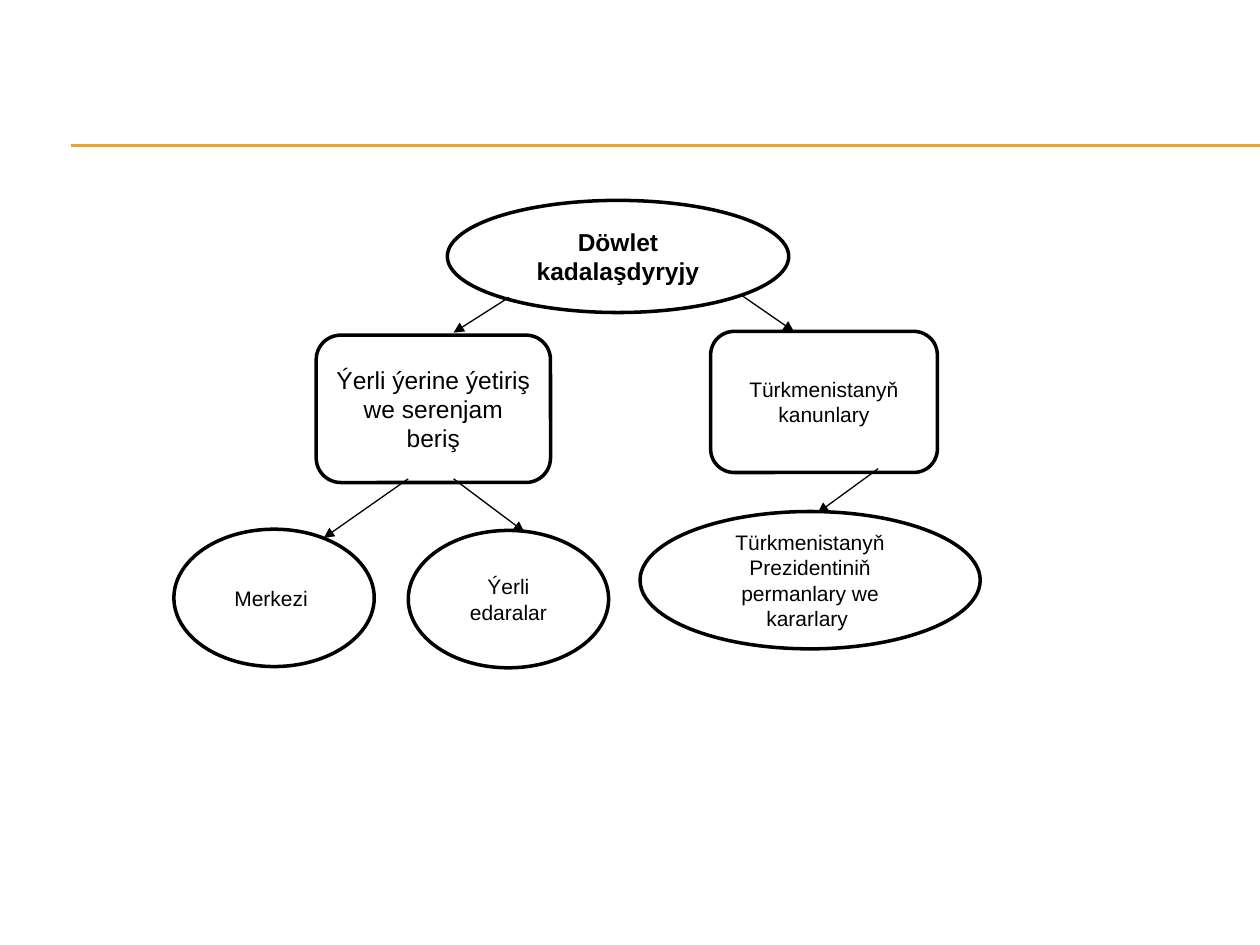
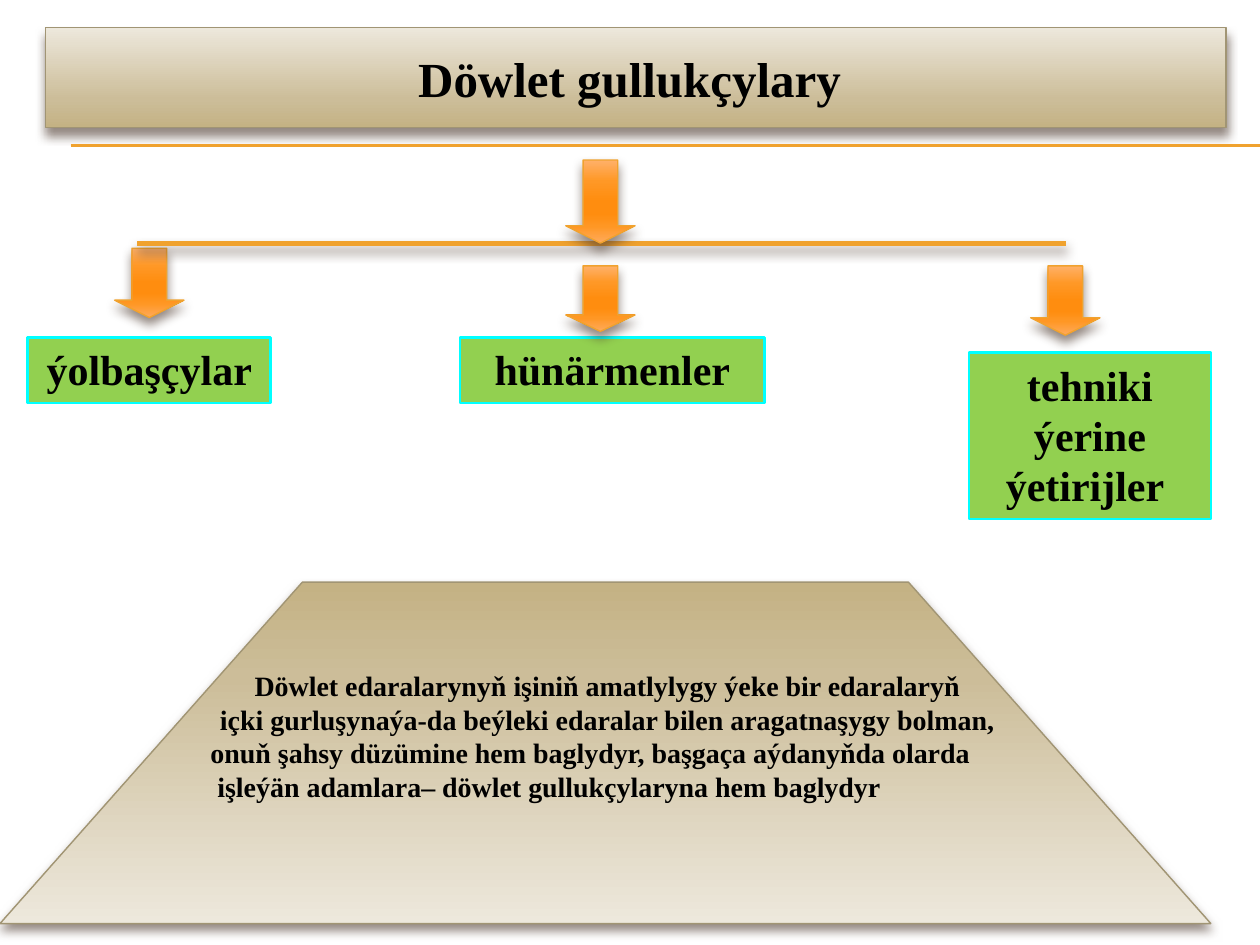
import itertools

import lxml.etree
import pptx
import pptx.dml.color
import pptx.enum.shapes
import pptx.enum.text
import pptx.oxml.ns
import pptx.util

EMU_PER_PX = 9144
SHAPES = pptx.enum.shapes.MSO_SHAPE
ANCHORS = pptx.enum.text.MSO_ANCHOR
ALIGNMENTS = {"c": pptx.enum.text.PP_ALIGN.CENTER, "j": pptx.enum.text.PP_ALIGN.JUSTIFY}


def px(*lengths):
    return [pptx.util.Emu(length * EMU_PER_PX) for length in lengths]


def rgb(code):
    return pptx.dml.color.RGBColor.from_string(code)


def add_xml(parent, tag, **attributes):
    values = {key: str(value) for key, value in attributes.items()}
    return lxml.etree.SubElement(parent, pptx.oxml.ns.qn(tag), values)


def write(frame, *lines, font="Arial", size=12, bold=False, align="c",
          anchor=ANCHORS.MIDDLE, wrap=True):
    frame.word_wrap = wrap
    frame.auto_size = pptx.enum.text.MSO_AUTO_SIZE.NONE
    frame.vertical_anchor = anchor
    for index, (line, side) in enumerate(zip(lines, itertools.cycle(align))):
        paragraph = frame.add_paragraph() if index else frame.paragraphs[0]
        paragraph.alignment = ALIGNMENTS[side]
        run = paragraph.add_run()
        run.text = line
        run.font.name = font
        run.font.size = pptx.util.Pt(size)
        run.font.bold = bold
        run.font.color.rgb = rgb("000000")


class Deck:
    """Holds the shared style and draws on the current slide."""

    ink = "000000"
    paper = "FFFFFF"
    accent = "F0A22E"
    green = "92D050"
    cyan = "00FFFF"
    bronze = "A19574"
    shade = "4E3B30"
    serif = "Times New Roman"
    sand = [(0, "EDE8DC"), (72, "CCBD99"), (100, "C4B284")]
    flame = [(0, "FFB16A"), (25, "FF9826"), (50, "FF8D0F"),
             (65, "FF8D0F"), (80, "FF9724"), (100, "FFAA5C")]

    def __init__(self):
        self.presentation = pptx.Presentation()
        self.presentation.slide_width, self.presentation.slide_height = px(1000, 750)
        self.slide = None

    def start(self, layout):
        self.slide = self.presentation.slides.add_slide(
            self.presentation.slide_layouts.get_by_name(layout))
        for y in (115, 116):
            self.line((56, y), (1000, y), self.accent)

    def cast_shadow(self, effects):
        shadow = add_xml(effects, "a:outerShdw", blurRad=76200, dist=50800,
                         dir=5400000, rotWithShape=0)
        color = add_xml(shadow, "a:srgbClr", val=self.shade)
        add_xml(color, "a:alpha", val=60000)

    def dress(self, shape, fill, outline, width, shadow=False):
        if isinstance(fill, str):
            shape.fill.solid()
            shape.fill.fore_color.rgb = rgb(fill)
        else:
            shape.fill.gradient()
            shape.fill.gradient_angle = 270
            stops = shape._element.spPr.find(".//" + pptx.oxml.ns.qn("a:gsLst"))
            stops.clear()
            for percent, code in fill:
                stop = add_xml(stops, "a:gs", pos=percent * 1000)
                add_xml(stop, "a:srgbClr", val=code)
        shape.line.color.rgb = rgb(outline)
        shape.line.width = pptx.util.Pt(width)
        shape.shadow.inherit = False
        if shadow:
            self.cast_shadow(shape._element.spPr.find(pptx.oxml.ns.qn("a:effectLst")))

    def line(self, start, end, color, width=0.75, arrow=False, shadow=False):
        connector = self.slide.shapes.add_connector(
            pptx.enum.shapes.MSO_CONNECTOR.STRAIGHT, *px(*start, *end))
        connector.line.color.rgb = rgb(color)
        connector.line.width = pptx.util.Pt(width)
        if arrow:
            add_xml(connector.line._get_or_add_ln(), "a:tailEnd", type="triangle")
        effects = add_xml(connector._element.spPr, "a:effectLst")
        if shadow:
            self.cast_shadow(effects)

    def node(self, kind, place, text, **style):
        node = self.slide.shapes.add_shape(kind, *px(*place))
        self.dress(node, self.paper, self.ink, 2)
        write(node.text_frame, text, **style)

    def label(self, place, text):
        label = self.slide.shapes.add_shape(SHAPES.RECTANGLE, *px(*place))
        self.dress(label, self.green, self.cyan, 1.5)
        write(label.text_frame, text, font=self.serif, size=24, bold=True,
              anchor=ANCHORS.TOP)

    def down_arrow(self, left, top, height):
        arrow = self.slide.shapes.add_shape(
            SHAPES.DOWN_ARROW, *px(left, top, 55, height))
        arrow.adjustments[1] = 0.25
        self.dress(arrow, self.flame, self.accent, 0.79, shadow=True)

    def title(self, place, text):
        title = self.slide.shapes.title
        title.left, title.top, title.width, title.height = px(*place)
        self.dress(title, self.sand, self.bronze, 0.79, shadow=True)
        write(title.text_frame, text, font=self.serif, size=28, bold=True, wrap=False)

    def trapezoid(self, corners, *lines, align):
        first, *rest = [px(*corner) for corner in corners]
        builder = self.slide.shapes.build_freeform(*first)
        builder.add_line_segments(rest, close=True)
        base = builder.convert_to_shape()
        upturned = [(100 - percent, code) for percent, code in reversed(self.sand)]
        self.dress(base, upturned, self.bronze, 0.79, shadow=True)
        frame = base.text_frame
        frame.margin_left, frame.margin_top, frame.margin_right, frame.margin_bottom = px(
            167, 0, 164, 27)
        write(frame, *lines, font=self.serif, size=16, bold=True, align=align)


def draw_regulation(deck):
    deck.start("Blank")
    oval, block = SHAPES.OVAL, SHAPES.ROUNDED_RECTANGLE
    deck.node(oval, (355, 159, 271, 89), "Döwlet kadalaşdyryjy", size=14, bold=True)
    deck.node(block, (251, 266, 186, 117), "Ýerli ýerine ýetiriş we serenjam beriş", size=14)
    deck.node(block, (564, 263, 180, 112), "Türkmenistanyň kanunlary")
    deck.node(oval, (138, 420, 159, 109), "Merkezi ")
    branches = [((404, 236), (360, 264)), ((588, 234), (630, 263)),
                ((697, 372), (649, 407)), ((324, 380), (257, 427)),
                ((360, 380), (416, 422))]
    for start, end in branches:
        deck.line(start, end, deck.ink, arrow=True)
    deck.node(oval, (324, 421, 159, 109), "Ýerli edaralar")
    deck.node(oval, (508, 406, 270, 109),
              "Türkmenistanyň Prezidentiniň permanlary we kararlary ")


def draw_servants(deck):
    deck.start("Title Only")
    deck.title((36, 22, 937, 79), "Döwlet gullukçylary ")
    deck.label((769, 280, 192, 132), "tehniki ýerine ýetirijler ")
    deck.label((365, 268, 242, 52), "hünärmenler")
    deck.label((22, 268, 193, 52), "ýolbaşçylar")
    for left, top, height in ((449, 211, 52), (91, 197, 55), (818, 211, 55)):
        deck.down_arrow(left, top, height)
    deck.line((109, 193), (846, 193), deck.accent, width=3, shadow=True)
    deck.down_arrow(449, 127, 66)
    deck.trapezoid(
        [(0, 733), (240, 462), (721, 462), (961, 733)],
        "Döwlet edaralarynyň işiniň amatlylygy ýeke bir edaralaryň",
        " içki gurluşynaýa-da beýleki edaralar bilen aragatnaşygy bolman, ",
        "onuň şahsy düzümine hem baglydyr, başgaça aýdanyňda olarda",
        " işleýän adamlara– döwlet gullukçylaryna hem baglydyr ",
        align="ccjj")


def main():
    deck = Deck()
    draw_regulation(deck)
    draw_servants(deck)
    deck.presentation.save("out.pptx")


if __name__ == "__main__":
    main()
